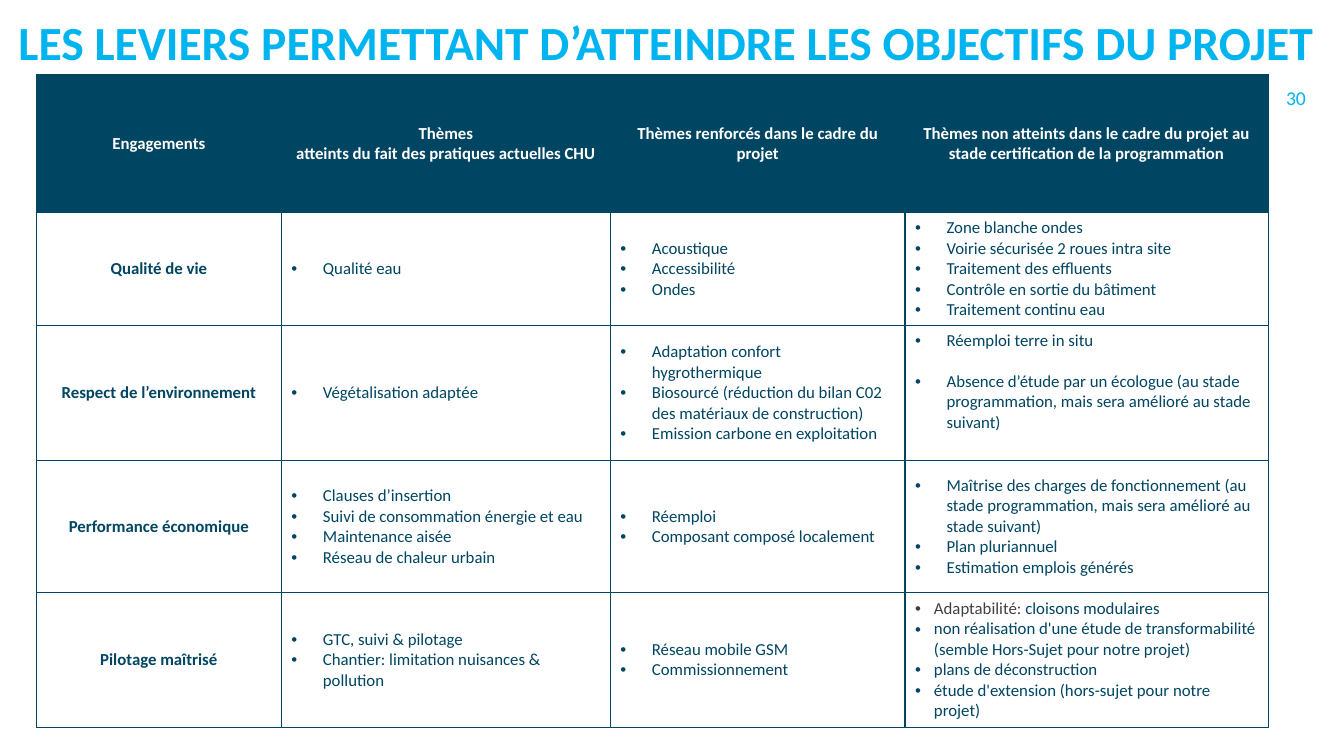
from dataclasses import dataclass

from lxml import etree
from pptx import Presentation
from pptx.dml.color import RGBColor
from pptx.enum import text as t
from pptx.oxml import ns
from pptx.util import Pt

TITLE = "LES LEVIERS PERMETTANT D’ATTEINDRE LES OBJECTIFS DU PROJET"
PAGE_NUMBER = "30"
HEADINGS = [
    ["Engagements"],
    ["Thèmes", "atteints du fait des pratiques actuelles CHU"],
    ["Thèmes renforcés dans le cadre du projet"],
    ["Thèmes non atteints dans le cadre du projet au stade certification de la programmation"],
]
COMMITMENTS = [
    ("Qualité de vie",
     ["Qualité eau"],
     ["Acoustique", "Accessibilité", "Ondes"],
     ["Zone blanche ondes", "Voirie sécurisée 2 roues intra site", "Traitement des effluents",
      "Contrôle en sortie du bâtiment", "Traitement continu eau"]),
    ("Respect de l’environnement",
     ["Végétalisation adaptée"],
     ["Adaptation confort hygrothermique",
      "Biosourcé (réduction du bilan C02 des matériaux de construction)",
      "Emission carbone en exploitation"],
     ["Réemploi terre in situ",
      "Absence d’étude par un écologue (au stade programmation, mais sera amélioré au stade suivant)"]),
    ("Performance économique",
     ["Clauses d’insertion", "Suivi de consommation énergie et eau", "Maintenance aisée",
      "Réseau de chaleur urbain"],
     ["Réemploi", "Composant composé localement"],
     ["Maîtrise des charges de fonctionnement (au stade programmation, mais sera amélioré au stade suivant)",
      "Plan pluriannuel", "Estimation emplois générés"]),
    ("Pilotage maîtrisé",
     ["GTC, suivi & pilotage", "Chantier: limitation nuisances & pollution"],
     ["Réseau mobile GSM", "Commissionnement"],
     [("Adaptabilité: ", "cloisons modulaires"),
      "non réalisation d'une étude de transformabilité (semble Hors-Sujet pour notre projet)",
      "plans de déconstruction",
      "étude d'extension (hors-sujet pour notre projet)"]),
]
SPACED_CELL = (2, 3)
NARROW_CELL = (4, 3)
COLUMN_WIDTHS = [175, 235, 210.5, 259.5]
ROW_HEIGHTS = [98.5, 80.5, 96.5, 94.5, 96]
TABLE_LEFT, TABLE_TOP = 26, 53.5


@dataclass(frozen=True)
class Theme:
    font: str = "Calibri"
    accent: str = "00B5EF"
    dark: str = "004562"
    grey: str = "424141"
    white: str = "FFFFFF"
    title_size: float = 34
    number_size: float = 14
    table_size: float = 12
    border: float = 1
    indent: float = 22.5
    narrow_indent: float = 13.5
    list_gap: float = 14.6


THEME = Theme()


def add_bullet(para, indent):
    properties = para._p.get_or_add_pPr()
    properties.set("marL", str(Pt(indent)))
    properties.set("indent", str(-Pt(indent)))
    etree.SubElement(properties, ns.qn("a:buFont")).set("typeface", "Arial")
    etree.SubElement(properties, ns.qn("a:buChar")).set("char", "•")


def write(frame, paragraphs, size=THEME.table_size, color=THEME.dark, bold=False,
          align=t.PP_ALIGN.LEFT, indent=0, gap=0):
    for index, content in enumerate(paragraphs):
        para = frame.paragraphs[0] if index == 0 else frame.add_paragraph()
        para.alignment = align
        if index and gap:
            para.space_before = Pt(gap)
        if indent:
            add_bullet(para, indent)
        parts = [(content, color)] if isinstance(content, str) else zip(content, (THEME.grey, color))
        for words, tint in parts:
            span = para.add_run()
            span.text = words
            span.font.name = THEME.font
            span.font.size = Pt(size)
            span.font.bold = bold
            span.font.color.rgb = RGBColor.from_string(tint)


def style_cell(cell, fill):
    cell.vertical_anchor = t.MSO_ANCHOR.MIDDLE
    properties = cell._tc.get_or_add_tcPr()
    for side in ("lnL", "lnR", "lnT", "lnB"):
        line = etree.SubElement(properties, ns.qn("a:" + side), w=str(Pt(THEME.border)))
        solid = etree.SubElement(line, ns.qn("a:solidFill"))
        etree.SubElement(solid, ns.qn("a:srgbClr"), val=THEME.dark)
    cell.fill.solid()
    cell.fill.fore_color.rgb = RGBColor.from_string(fill)


def add_title(page):
    box = page.shapes.title
    box.left, box.top, box.width, box.height = Pt(6), Pt(8), Pt(949), Pt(45.5)
    frame = box.text_frame
    frame.auto_size = t.MSO_AUTO_SIZE.NONE
    frame.vertical_anchor = t.MSO_ANCHOR.BOTTOM
    write(frame, [TITLE], size=THEME.title_size, color=THEME.accent, bold=True)


def add_page_number(page):
    frame = page.shapes.add_textbox(Pt(911.5), Pt(46), Pt(48), Pt(48)).text_frame
    frame.word_wrap = True
    frame.vertical_anchor = t.MSO_ANCHOR.MIDDLE
    write(frame, [PAGE_NUMBER], size=THEME.number_size, color=THEME.accent)


def add_commitments(page):
    table = page.shapes.add_table(
        len(ROW_HEIGHTS), len(COLUMN_WIDTHS), Pt(TABLE_LEFT), Pt(TABLE_TOP),
        Pt(sum(COLUMN_WIDTHS)), Pt(sum(ROW_HEIGHTS))).table
    for column, width in zip(table.columns, COLUMN_WIDTHS):
        column.width = Pt(width)
    for row, height in zip(table.rows, ROW_HEIGHTS):
        row.height = Pt(height)

    for column, heading in enumerate(HEADINGS):
        cell = table.cell(0, column)
        style_cell(cell, THEME.dark)
        write(cell.text_frame, heading, color=THEME.white, bold=True, align=t.PP_ALIGN.CENTER)

    for row, (commitment, *themes) in enumerate(COMMITMENTS, start=1):
        cell = table.cell(row, 0)
        style_cell(cell, THEME.white)
        write(cell.text_frame, [commitment], bold=True, align=t.PP_ALIGN.CENTER)
        for column, items in enumerate(themes, start=1):
            cell = table.cell(row, column)
            style_cell(cell, THEME.white)
            spaced = (row, column) == SPACED_CELL
            narrow = (row, column) == NARROW_CELL
            if spaced:
                cell.vertical_anchor = t.MSO_ANCHOR.TOP
            write(cell.text_frame, items, gap=THEME.list_gap if spaced else 0,
                  indent=THEME.narrow_indent if narrow else THEME.indent)


def main():
    deck = Presentation()
    deck.slide_width, deck.slide_height = Pt(960), Pt(540)
    page = deck.slides.add_slide(deck.slide_layouts[5])
    add_title(page)
    add_page_number(page)
    add_commitments(page)
    deck.save("out.pptx")


if __name__ == "__main__":
    main()
